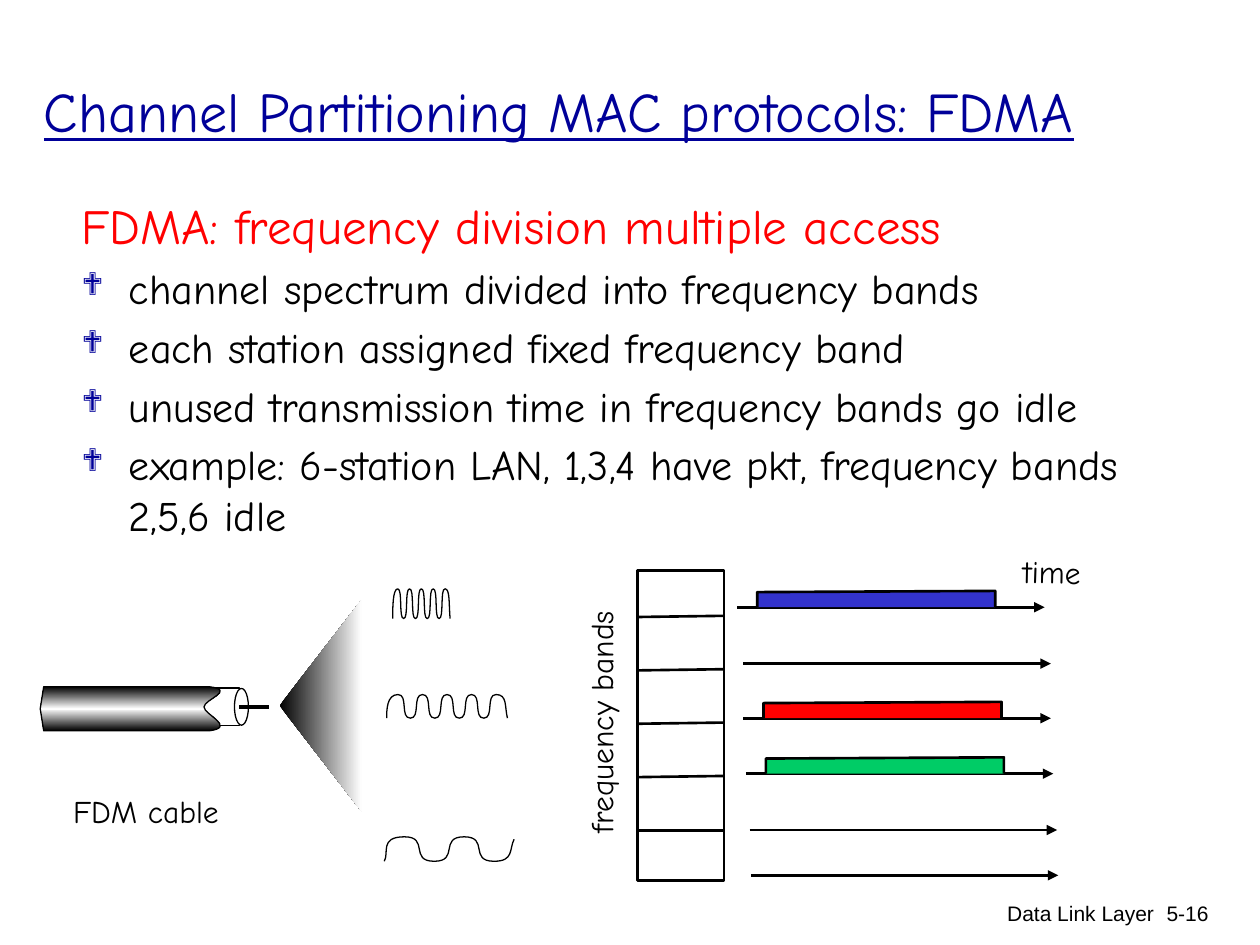
from copy import deepcopy

from lxml.etree import SubElement
from pptx import Presentation
from pptx.dml.color import RGBColor
from pptx.enum.shapes import MSO_CONNECTOR, MSO_SHAPE
from pptx.enum.text import MSO_ANCHOR, PP_ALIGN
from pptx.oxml.ns import qn
from pptx.util import Pt

COLOURS = {
    "black": "000000", "white": "FFFFFF", "navy": "000099",
    "blue": "3333CC", "red": "FF0000", "green": "00CC66",
}
HAND, PLAIN = "Comic Neue", "Arial"


def colour(name):
    return RGBColor.from_string(COLOURS[name])


def write(para, text, size=18, font=HAND, ink="black", underline=False):
    span = para.add_run()
    span.text = text
    span.font.size = Pt(size)
    span.font.name = font
    span.font.color.rgb = colour(ink)
    if underline:
        span.font.underline = True


def add_text(page, box, text, align=PP_ALIGN.LEFT, anchor=MSO_ANCHOR.TOP,
             wrap=True, rotation=0, **style):
    shape = page.shapes.add_textbox(*map(Pt, box))
    shape.rotation = rotation
    frame = shape.text_frame
    frame.word_wrap = wrap
    frame.vertical_anchor = anchor
    para = frame.paragraphs[0]
    para.alignment = align
    write(para, text, **style)
    return frame


def add_bullet(para):
    """Hang the paragraph behind a navy diamond."""
    props = para._p.get_or_add_pPr()
    props.set("marL", str(Pt(27)))
    props.set("indent", str(-Pt(27)))
    tint = SubElement(props, qn("a:buClr"))
    SubElement(tint, qn("a:srgbClr"), val=COLOURS["navy"])
    SubElement(props, qn("a:buSzPct"), val="75000")
    SubElement(props, qn("a:buFont"), typeface="Wingdings", charset="2")
    SubElement(props, qn("a:buChar"), char="❖")


def paint(shape, fill=None, line="black", width=0.75):
    """Set fill and line; a list of colours as fill makes a gradient."""
    shape.shadow.inherit = False
    if fill is None:
        shape.fill.background()
    elif isinstance(fill, list):
        shape.fill.gradient()
        stops = shape._element.spPr.find(qn("a:gradFill")).find(qn("a:gsLst"))
        for _ in fill[2:]:
            stops.append(deepcopy(stops[-1]))
        for index, (stop, name) in enumerate(zip(shape.fill.gradient_stops, fill)):
            stop.position = index / (len(fill) - 1)
            stop.color.rgb = colour(name)
    else:
        shape.fill.solid()
        shape.fill.fore_color.rgb = colour(fill)
    if line:
        shape.line.color.rgb = colour(line)
        shape.line.width = Pt(width)
    else:
        shape.line.fill.background()
    return shape


def add_preset(page, kind, box, **style):
    return paint(page.shapes.add_shape(kind, *map(Pt, box)), **style)


def add_outline(page, start, segments, close=False, **style):
    """Each segment lists one point for a line or three for a cubic curve."""
    builder = page.shapes.build_freeform(*map(Pt, start))
    builder.add_line_segments([(Pt(x), Pt(y)) for part in segments for x, y in part],
                              close=close)
    shape = builder.convert_to_shape()
    steps = iter(list(shape._element.spPr.iter(qn("a:lnTo"))))
    for part in segments:
        group = [next(steps) for _ in part]
        if len(group) == 3:
            curve = SubElement(group[0].getparent(), qn("a:cubicBezTo"))
            group[0].addprevious(curve)
            for step in group:
                curve.append(step[0])
                step.getparent().remove(step)
    return paint(shape, **style)


def add_line(page, start, end, width=1.5, arrow=False):
    line = page.shapes.add_connector(MSO_CONNECTOR.STRAIGHT, *map(Pt, start + end))
    line.line.color.rgb = colour("black")
    line.line.width = Pt(width)
    props = line._element.spPr
    if arrow:
        SubElement(props.find(qn("a:ln")), qn("a:tailEnd"), type="triangle")
    SubElement(props, qn("a:effectLst"))


def add_wave(page, box, turns, lead, bow=0):
    """A wave with equally spaced turns, the outer ones lead from the ends."""
    left, top, width, height = box
    right, bottom = left + width, top + height
    step = (width - 2 * lead) / (turns - 1)
    crests = [(left + lead + i * step, bottom if i % 2 else top) for i in range(turns)]
    curves = [[(left + bow, bottom - height / 3), (left - bow, top), crests[0]]]
    for (x, y), (next_x, next_y) in zip(crests, crests[1:]):
        curves.append([(x + step * 0.85, y), (next_x - step * 0.85, next_y),
                       (next_x, next_y)])
    x, y = crests[-1]
    end = (right, bottom if turns % 2 else top + height / 10)
    curves.append([(x + lead, y), (right - lead / 4, top + height / 2), end])
    add_outline(page, (left, bottom), curves)


def add_body(page, box):
    frame = add_text(page, box, "FDMA: frequency division multiple access",
                     size=28, ink="red")
    frame.paragraphs[0].space_before = Pt(5.6)
    for text in (
        "channel spectrum divided into frequency bands",
        "each station assigned fixed frequency band",
        "unused transmission time in frequency bands go idle",
        "example: 6-station LAN, 1,3,4 have pkt, frequency bands 2,5,6 idle",
    ):
        para = frame.add_paragraph()
        para.space_before = Pt(4.8)
        add_bullet(para)
        write(para, text, size=24)


def add_cable(page, box):
    left, top, width, height = box
    middle, bottom = top + height / 2, top + height
    group = page.shapes.add_group_shape()
    add_preset(group, MSO_SHAPE.RECTANGLE, (left + 93, top + 0.7, 21, 21.6), fill="white")
    neck, bulge = left + 96.5, left + 112.4
    start, notch = (left + 2, top), (left + 93.6, middle - 1)
    jacket = add_outline(group, start, [
        [(left, middle)], [(left + 2, bottom)], [(neck, bottom)],
        [(bulge, bottom - 2), (notch[0], notch[1] + 4.3), notch],
        [(notch[0], notch[1] - 4.3), (bulge, top + 2), (neck, top)],
        [start],
    ], close=True, fill=["black", "white", "black"])
    jacket.fill.gradient_angle = 90
    add_preset(group, MSO_SHAPE.OVAL, (left + 111, top + 1, 8, 21), fill="white")
    add_line(group, (left + 113.8, middle - 1), (left + width, middle - 1), width=2.25)
    add_text(page, (left + 11.7, top + 56.7, 103.7, 28.8), "FDM cable", wrap=False)


def add_signals(page, box):
    """The fan of light and the three waves of different frequency."""
    left, top, width, height = box
    edge = left + 46.8
    start = (edge, top + 6.5)
    fan = add_outline(page, start, [[(left, top + 67)], [(edge, top + 127.5)], [start]],
                      close=True, fill=["black", "white"], line=None)
    fan.fill.gradient_angle = 0
    add_wave(page, (left + 61.2, top + 60.7, 69, 13.5), turns=9, lead=6.5)
    add_wave(page, (left + 64.6, top + 0.3, 32.8, 17), turns=9, lead=2.9)
    add_wave(page, (left + 59.8, top + 142, width - 59.8, 14), turns=4, lead=11.5, bow=2.9)


def add_bands(page, box):
    left, top, width, height = box
    add_preset(page, MSO_SHAPE.RECTANGLE, box, fill="white", width=1.5)
    for row in range(5):
        y = top + 26.6 + 30.5 * row
        slant = 0 if row == 4 else 0.7
        add_line(page, (left, y), (left + width, y - slant))


def add_timelines(page, box):
    left, top, width, height = box
    for indent, drop, fill in (
        (0, 21, "blue"), (3.6, 53.2, None), (3.6, 84.4, "red"),
        (5, 116.1, "green"), (7.2, 148.3, None), (7.9, 174.2, None),
    ):
        x, y = left + indent, top + drop
        add_line(page, (x, y), (x + width, y), arrow=True)
        if fill:
            start, end = x + 11.5, x + 147.5
            add_outline(page, (start, y),
                        [[(start, y - 8.6)], [(end, y - 9.3)], [(end, y)]],
                        fill=fill, width=1.5)


def add_band_labels(page, box):
    left, top, width, height = box
    add_text(page, (left, top + 66.4, 152.6, 28.8), "frequency bands",
             wrap=False, rotation=270)
    add_text(page, (left + 310.3, top - 13.9, 51.8, 28.8), "time",
             wrap=False, rotation=1.1)


def add_footer(page, box):
    left, top, width, height = box
    for x, span, text in ((left, 228.2, "Data Link Layer"),
                          (left + width - 53.3, 53.3, "5-16")):
        add_text(page, (x, top, span, height), text, align=PP_ALIGN.RIGHT,
                 size=12, font=PLAIN)


def main():
    deck = Presentation()
    deck.slide_width, deck.slide_height = Pt(720), Pt(540)
    page = deck.slides.add_slide(deck.slide_layouts[6])
    add_footer(page, (438.5, 510.9, 259.2, 36))
    add_text(page, (18, 18, 680, 90), "Channel Partitioning MAC protocols: FDMA",
             anchor=MSO_ANCHOR.MIDDLE, size=32, ink="navy", underline=True)
    add_body(page, (39.6, 108, 647.3, 365.8))
    add_bands(page, (364.2, 326, 49.6, 177.1))
    add_timelines(page, (421.2, 326, 175.7, 177.1))
    add_band_labels(page, (267.1, 326, 362.1, 177.1))
    add_signals(page, (159.8, 336.2, 134, 156))
    add_cable(page, (23, 392.4, 131, 25.2))
    deck.save("out.pptx")


if __name__ == "__main__":
    main()
